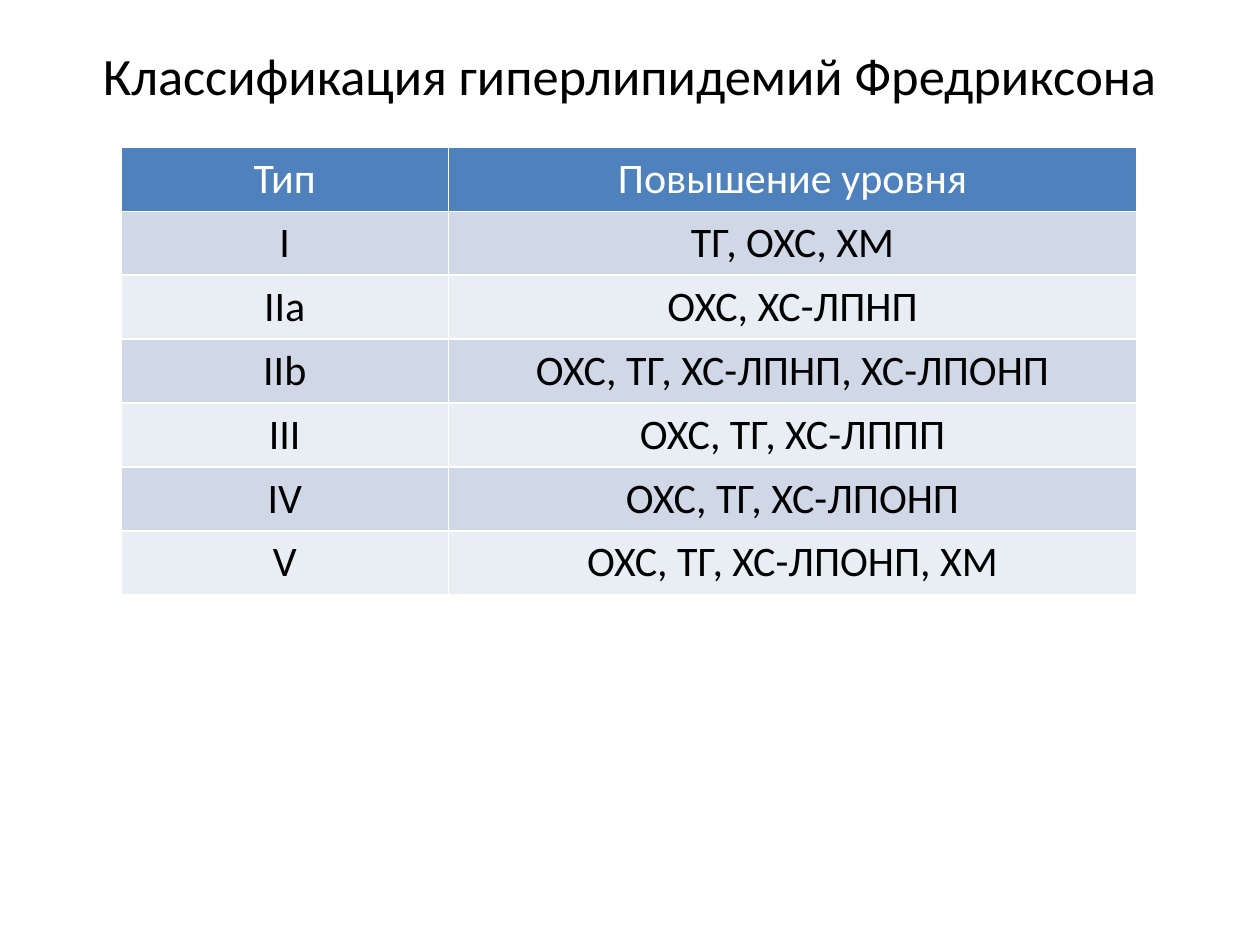
from dataclasses import dataclass

from pptx import Presentation
from pptx import util as u
from pptx.dml.color import RGBColor
from pptx.enum import text

WIDTH, HEIGHT = u.Inches(10), u.Inches(7.5)
FONT = "Calibri"
BLACK = RGBColor(0x00, 0x00, 0x00)
WHITE = RGBColor(0xFF, 0xFF, 0xFF)
HEADER_BLUE = RGBColor(0x4F, 0x81, 0xBD)
BANDS = (RGBColor(0xD0, 0xD8, 0xE8), RGBColor(0xE9, 0xED, 0xF4))
COLUMN_SHARES = (0.26, 0.546)
ROW_HEIGHT = u.Inches(0.5)


@dataclass(frozen=True)
class Row:
    """One row of the classification table."""

    kind: str
    raised: str


ROWS = (
    Row("Тип", "Повышение уровня"),
    Row("I", "ТГ, ОХС, ХМ"),
    Row("IIa", "ОХС, ХС-ЛПНП"),
    Row("IIb", "ОХС, ТГ, ХС-ЛПНП, ХС-ЛПОНП"),
    Row("III", "ОХС, ТГ, ХС-ЛППП"),
    Row("IV", "ОХС, ТГ, ХС-ЛПОНП"),
    Row("V", "ОХС, ТГ, ХС-ЛПОНП, ХМ"),
)


def write(frame, words: str, *, size: float, color: RGBColor = BLACK) -> None:
    """Put one centred line of formatted text into a text frame."""
    para = frame.paragraphs[0]
    para.alignment = text.PP_ALIGN.CENTER
    span = para.add_run()
    span.text = words
    span.font.name = FONT
    span.font.size = u.Pt(size)
    span.font.bold = False
    span.font.color.rgb = color


def add_title(page, words: str) -> None:
    """Place and format the title placeholder."""
    box = page.shapes.title
    box.left, box.top = int(WIDTH * 0.053), u.Inches(0.29)
    box.width, box.height = int(WIDTH * 0.894), u.Inches(0.61)
    frame = box.text_frame
    frame.word_wrap = True
    frame.auto_size = text.MSO_AUTO_SIZE.NONE
    frame.vertical_anchor = text.MSO_ANCHOR.TOP
    write(frame, words, size=30)


def add_classification(page, rows: tuple[Row, ...]) -> None:
    """Draw the banded table with its header row."""
    widths = [int(WIDTH * share) for share in COLUMN_SHARES]
    table = page.shapes.add_table(
        len(rows), len(widths), int(WIDTH * 0.096), u.Inches(1.17),
        sum(widths), ROW_HEIGHT * len(rows),
    ).table
    for column, width in zip(table.columns, widths):
        column.width = width
    for index, row in enumerate(rows):
        table.rows[index].height = ROW_HEIGHT
        is_header = index == 0
        fill = HEADER_BLUE if is_header else BANDS[(index - 1) % len(BANDS)]
        for cell, words in zip(table.rows[index].cells, (row.kind, row.raised)):
            cell.fill.solid()
            cell.fill.fore_color.rgb = fill
            write(cell.text_frame, words, size=24, color=WHITE if is_header else BLACK)


def main() -> None:
    """Build the slide and save the deck."""
    deck = Presentation()
    deck.slide_width, deck.slide_height = WIDTH, HEIGHT
    page = deck.slides.add_slide(deck.slide_layouts.get_by_name("Title Only"))
    add_title(page, "Классификация гиперлипидемий Фредриксона")
    add_classification(page, ROWS)
    deck.save("out.pptx")


if __name__ == "__main__":
    main()
